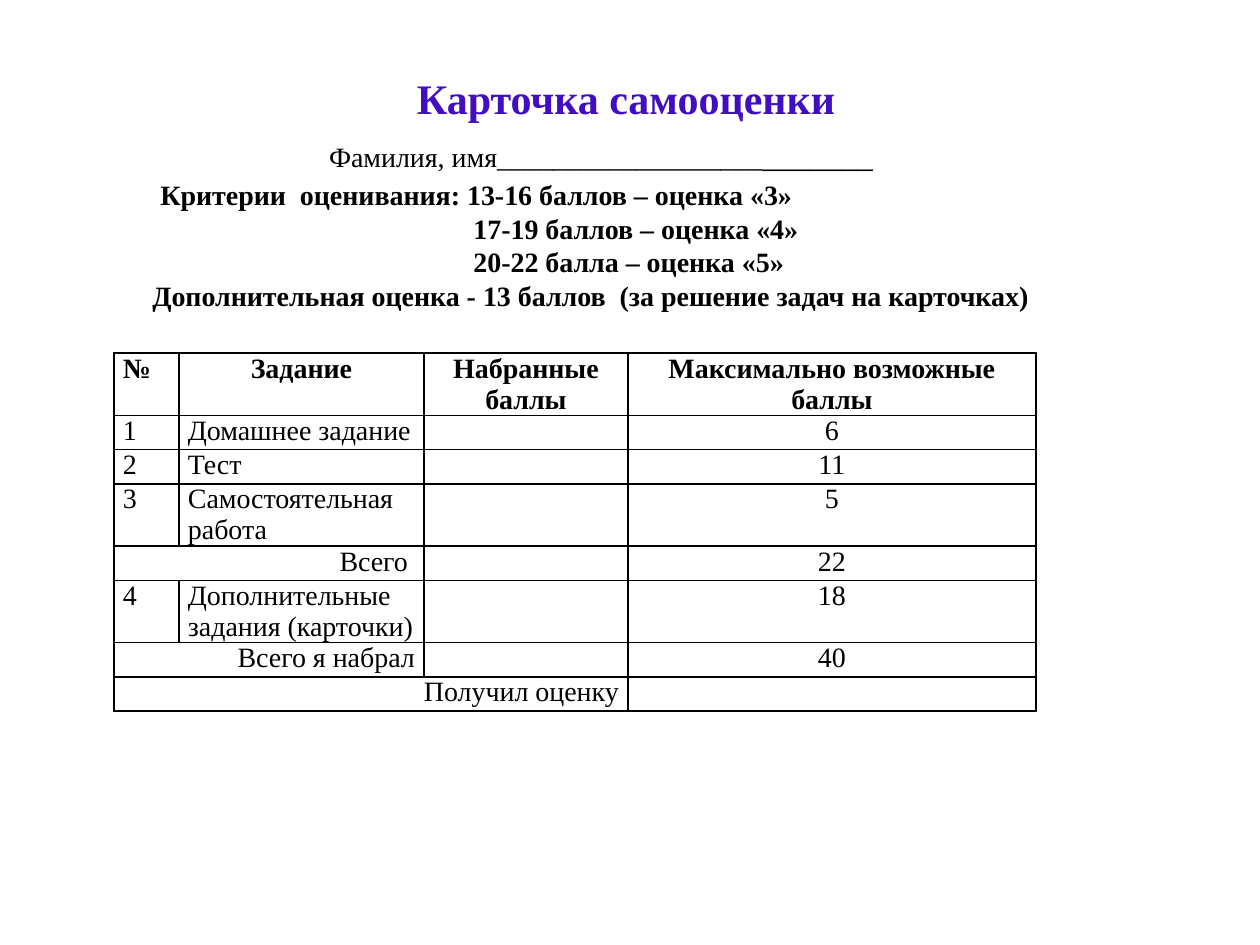
from lxml.etree import SubElement
from pptx import Presentation
from pptx.dml.color import RGBColor
from pptx.enum.text import MSO_ANCHOR, PP_ALIGN
from pptx.oxml.ns import qn
from pptx.util import Pt

BLACK = RGBColor(0, 0, 0)
PURPLE = RGBColor(0x41, 0x0E, 0xC2)
LEFT, MID, RIGHT = PP_ALIGN.LEFT, PP_ALIGN.CENTER, PP_ALIGN.RIGHT
SCALE = 914400 / 126


def px(num):
    """Turn pixels into EMU."""
    return round(num * SCALE)


class Card:
    """Holds the style and the current slide."""

    font = "Times New Roman"
    size = 16

    def __init__(self, deck):
        self.slide = deck.slides.add_slide(deck.slide_layouts[5])

    def style(self, run, size=None, bold=False, color=BLACK):
        """Format one run."""
        font = run.font
        font.name, font.size, font.bold = self.font, Pt(size or self.size), bold
        font.color.rgb = color

    def title(self, text, x, y, w, h):
        """Place the slide title."""
        shape = self.slide.shapes.title
        shape.left, shape.top, shape.width, shape.height = map(px, (x, y, w, h))
        frame = shape.text_frame
        frame.text = text
        frame.vertical_anchor = MSO_ANCHOR.TOP
        para = frame.paragraphs[0]
        para.alignment = MID
        self.style(para.runs[0], 24, True, PURPLE)

    def notes(self, lines, x, y, w, h):
        """Add a text box of (parts, align, indent, gap) lines."""
        frame = self.slide.shapes.add_textbox(*map(px, (x, y, w, h))).text_frame
        frame.word_wrap = True
        for num, (parts, align, indent, gap) in enumerate(lines):
            para = frame.add_paragraph() if num else frame.paragraphs[0]
            para.alignment = align
            if indent:
                para._p.get_or_add_pPr().set("marL", str(px(indent)))
            if gap:
                para.space_before = Pt(gap)
            for text, size, bold in parts:
                run = para.add_run()
                run.text = text
                self.style(run, size, bold)

    def border(self, cell):
        """Draw thin black lines round a cell with no fill."""
        props = cell._tc.get_or_add_tcPr()
        for num, side in enumerate(("a:lnL", "a:lnR", "a:lnT", "a:lnB")):
            line = props.makeelement(qn(side), {"w": str(Pt(1))})
            fill = SubElement(line, qn("a:solidFill"))
            SubElement(fill, qn("a:srgbClr"), val=str(BLACK))
            props.insert(num, line)

    def cell(self, cell, text, align, bold):
        """Fill and format one cell."""
        cell.margin_left = cell.margin_right = px(9)
        cell.margin_top = cell.margin_bottom = 0
        cell.fill.background()
        self.border(cell)
        cell.text = text
        para = cell.text_frame.paragraphs[0]
        para.alignment = align
        for run in para.runs:
            self.style(run, bold=bold)
        if not text:
            SubElement(para._p, qn("a:endParaRPr"), sz=str(self.size * 100))

    def table(self, rows, x, y, cols, line):
        """Add a table of (lines, span, texts) rows."""
        high = sum(row[0] for row in rows) * line
        frame = self.slide.shapes.add_table(
            len(rows), len(cols), px(x), px(y), px(sum(cols)), px(high))
        table = frame.table
        table.first_row = table.horz_banding = False
        for col, wide in zip(table.columns, cols):
            col.width = px(wide)
        for r, (count, span, texts) in enumerate(rows):
            table.rows[r].height = px(count * line)
            for c, text in enumerate(texts):
                if c >= 2 or (r == 0 and c):
                    align = MID
                else:
                    align = RIGHT if span > 1 and c == 0 else LEFT
                self.cell(table.cell(r, c), text, align, r == 0)
            if span > 1:
                table.cell(r, 0).merge(table.cell(r, span - 1))


def main():
    """Build the slide."""
    deck = Presentation()
    deck.slide_width, deck.slide_height = px(1260), px(945)
    card = Card(deck)
    card.table([
        (2, 1, ("№", "Задание", "Набранные баллы", "Максимально возможные баллы")),
        (1, 1, ("1", "Домашнее задание", "", "6")),
        (1, 1, ("2", "Тест", "", "11")),
        (2, 1, ("3", "Самостоятельная работа", "", "5")),
        (1, 2, ("Всего ", "", "", "22")),
        (2, 1, ("4", "Дополнительные задания (карточки)", "", "18")),
        (1, 2, ("Всего я набрал", "", "", "40")),
        (1, 3, ("Получил оценку", "", "", "")),
    ], 114, 353, (65, 245, 204, 408), 31)
    name = [("Фамилия, имя" + "_" * 19, 16, False), ("_" * 7, 18, False)]
    marks = [
        ("Критерии  оценивания: 13-16 баллов – оценка «3»", 8, 2),
        ("17-19 баллов – оценка «4»", 321, 0),
        ("20-22 балла – оценка «5»", 321, 0),
        ("Дополнительная оценка - 13 баллов  (за решение задач на карточках)", 0, 0),
    ]
    lines = [(name, MID, 0, 0)]
    lines += [([(text, 16, True)], LEFT, dent, gap) for text, dent, gap in marks]
    card.notes(lines, 140, 130, 922, 190)
    card.title("Карточка самооценки", 333, 66, 586, 63)
    deck.save("out.pptx")


if __name__ == "__main__":
    main()
